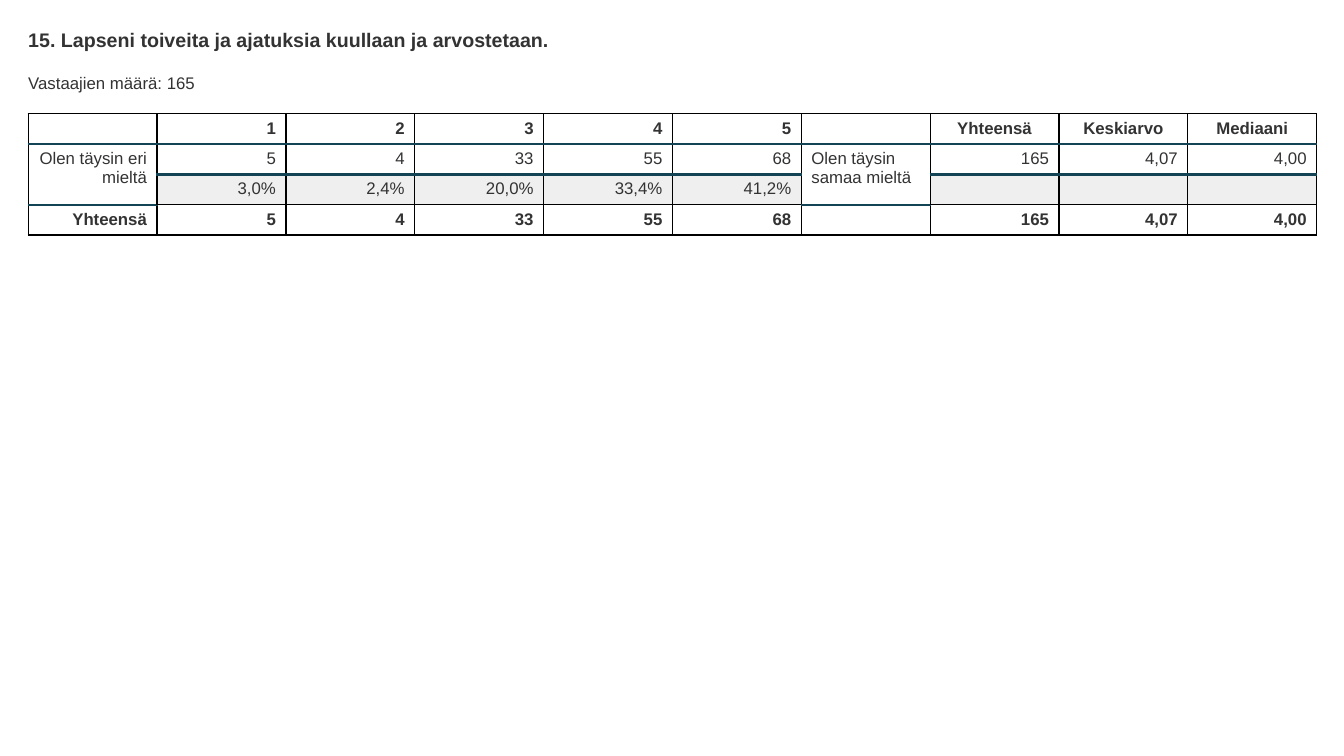
import pptx
import pptx.util
import pptx.dml.color
import pptx.enum.text
import lxml.etree

A = "{http://schemas.openxmlformats.org/drawingml/2006/main}"
SIZE = 12
MARGIN = 0.28
ROW_H = 0.3
WIDTH = 12.78
LABEL_COLS = (0, 6)
ALIGN = pptx.enum.text.PP_ALIGN


def add_run(p, text, size, bold):
    r = p.add_run()
    r.text = text
    r.font.name = "Arial"
    r.font.size = pptx.util.Pt(size)
    r.font.bold = bold
    r.font.color.rgb = pptx.dml.color.RGBColor.from_string("333333")


def add_border(cell, side, color, width):
    """Draw one side (L, R, T or B) of a cell; call before setting its fill."""
    ln = lxml.etree.SubElement(cell._tc.get_or_add_tcPr(), A + "ln" + side,
                               w=str(pptx.util.Pt(width)))
    fill = lxml.etree.SubElement(ln, A + "solidFill")
    lxml.etree.SubElement(fill, A + "srgbClr", val=color)


prs = pptx.Presentation()
prs.slide_width = pptx.util.Inches(13.33)
prs.slide_height = pptx.util.Inches(7.5)
s = prs.slides.add_slide(prs.slide_layouts[6])

headings = [
    ("15. Lapseni toiveita ja ajatuksia kuullaan ja arvostetaan.", 0.28, 0.23, 14, True),
    ("Vastaajien määrä: 165", 0.72, 0.2, SIZE, False),
]
for text, top, height, size, bold in headings:
    sp = s.shapes.add_textbox(*map(pptx.util.Inches, (MARGIN, top, WIDTH, height)))
    tf = sp.text_frame
    tf.word_wrap = True
    tf.margin_left = tf.margin_right = tf.margin_top = tf.margin_bottom = 0
    add_run(tf.paragraphs[0], text, size, bold)

rows = [
    ["", "1", "2", "3", "4", "5", "", "Yhteensä", "Keskiarvo", "Mediaani"],
    ["Olen täysin eri mieltä", "5", "4", "33", "55", "68",
     "Olen täysin samaa mieltä", "165", "4,07", "4,00"],
    ["", "3,0%", "2,4%", "20,0%", "33,4%", "41,2%", "", "", "", ""],
    ["Yhteensä", "5", "4", "33", "55", "68", "", "165", "4,07", "4,00"],
]
n_rows, n_cols = len(rows), len(rows[0])
table = s.shapes.add_table(
    n_rows, n_cols,
    *map(pptx.util.Inches, (MARGIN, 1.13, WIDTH, n_rows * ROW_H))).table
table.first_row = table.horz_banding = False
for row in table.rows:
    row.height = pptx.util.Inches(ROW_H)
for col in LABEL_COLS:
    table.cell(1, col).merge(table.cell(2, col))

for i, values in enumerate(rows):
    for j, text in enumerate(values):
        cell = table.cell(i, j)
        label = j in LABEL_COLS
        p = cell.text_frame.paragraphs[0]
        if i == 0 and j > 6:
            p.alignment = ALIGN.CENTER
        elif j == 6:
            p.alignment = ALIGN.LEFT
        else:
            p.alignment = ALIGN.RIGHT
        if text:
            add_run(p, text, SIZE, i in (0, 3))
        else:
            lxml.etree.SubElement(p._p, A + "endParaRPr", sz=str(SIZE * 100))

        # Teal rules lie under the header and under the answer counts or their labels
        teal_edges = (1, 3) if label else (1, 2)
        for side in "LRTB":
            edge = {"T": i, "B": i + 1}.get(side)
            if edge in teal_edges or (label and i == 1 and side == "B"):
                add_border(cell, side, "124456", 2)
            else:
                add_border(cell, side, "000000", 1)
        if i == 2 and not label:
            cell.fill.solid()
            cell.fill.fore_color.rgb = pptx.dml.color.RGBColor.from_string("EFEFEF")
        else:
            cell.fill.background()

prs.save("out.pptx")
